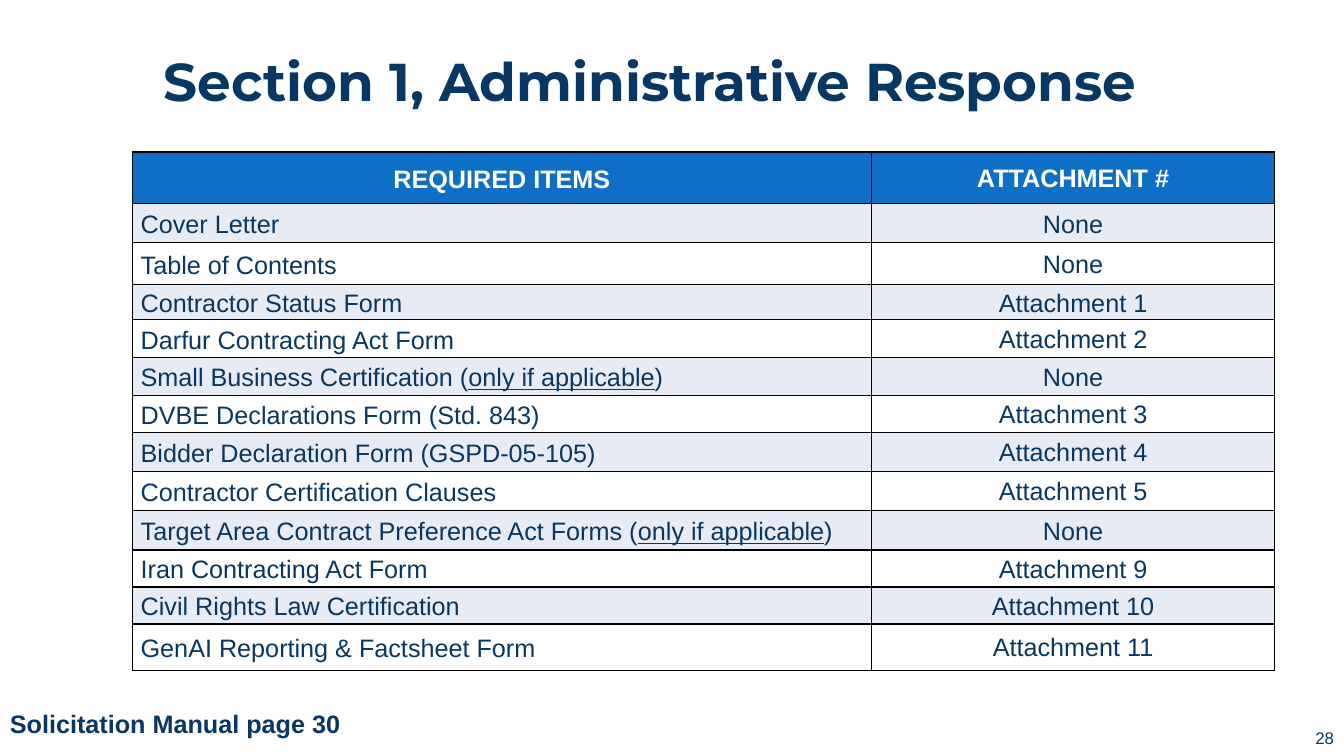
from pptx import Presentation
from pptx.util import Pt
from pptx.dml.color import RGBColor
from pptx.enum.text import PP_ALIGN, MSO_ANCHOR
from pptx.oxml.ns import qn
from lxml.etree import SubElement

COLORS = {"navy": "083763", "blue": "0F6FC6", "pale": "E7EBF5",
          "white": "FFFFFF", "black": "000000"}


def style(para, size, color="navy", bold=False, font="Arial"):
    for run in para.runs:
        run.font.name = font
        run.font.size = Pt(size)
        run.font.bold = bold
        run.font.color.rgb = RGBColor.from_string(COLORS[color])


def label(text, left, top, width, height, wrap=True):
    box = slide.shapes.add_textbox(Pt(left), Pt(top), Pt(width), Pt(height))
    frame = box.text_frame
    frame.text = text
    frame.word_wrap = wrap
    frame.vertical_anchor = MSO_ANCHOR.MIDDLE
    return frame.paragraphs[0]


deck = Presentation()
deck.slide_width, deck.slide_height = Pt(960), Pt(540)
slide = deck.slides.add_slide(deck.slide_layouts[6])

# Title
title = label("Section 1, Administrative Response", 110, 19, 784, 82)
title.line_spacing = 0.9
style(title, 38, bold=True, font="Montserrat")

# Table of required items: item, attachment, row height
NOTE = "only if applicable"
rows = [
    ("REQUIRED ITEMS", "ATTACHMENT #", 37),
    ("Cover Letter", "None", 28),
    ("Table of Contents", "None", 30),
    ("Contractor Status Form", "Attachment 1", 25),
    ("Darfur Contracting Act Form", "Attachment 2", 27),
    (f"Small Business Certification ({NOTE})", "None", 27),
    ("DVBE Declarations Form (Std. 843)", "Attachment 3", 26.5),
    ("Bidder Declaration Form (GSPD-05-105)", "Attachment 4", 28),
    ("Contractor Certification Clauses", "Attachment 5", 28),
    (f"Target Area Contract Preference Act Forms ({NOTE})", "None", 28),
    ("Iran Contracting Act Form", "Attachment 9", 26.5),
    ("Civil Rights Law Certification", "Attachment 10", 26.5),
    ("GenAI Reporting & Factsheet Form", "Attachment 11", 33),
]
total = sum(row[2] for row in rows)
table = slide.shapes.add_table(len(rows), 2, Pt(94.5), Pt(108.5),
                               Pt(816), Pt(total)).table
table.columns[0].width, table.columns[1].width = Pt(528), Pt(288)

for r, (item, form, height) in enumerate(rows):
    table.rows[r].height = Pt(height)
    head = r == 0
    fill = "blue" if head else "pale" if r % 2 else "white"
    for c, text in enumerate((item, form)):
        cell = table.cell(r, c)
        cell.vertical_anchor = MSO_ANCHOR.MIDDLE
        cell.margin_left = cell.margin_right = Pt(5 if c else 6)
        cell.margin_top = Pt(0 if c else 1)
        cell.margin_bottom = Pt(0)

        # Borders go in ahead of the fill
        props = cell._tc.get_or_add_tcPr()
        for side in ("a:lnL", "a:lnR", "a:lnT", "a:lnB"):
            line = SubElement(props, qn(side), w=str(Pt(1)))
            solid = SubElement(line, qn("a:solidFill"))
            SubElement(solid, qn("a:srgbClr"), val=COLORS["black"])
        cell.fill.solid()
        cell.fill.fore_color.rgb = RGBColor.from_string(COLORS[fill])

        # Text, with the note underlined
        para = cell.text_frame.paragraphs[0]
        para.line_spacing = 1.07
        para.alignment = PP_ALIGN.CENTER if head or c else PP_ALIGN.LEFT
        for part in filter(None, text.partition(NOTE)):
            run = para.add_run()
            run.text = part
            run.font.underline = part == NOTE
        style(para, 18, "white" if head else "navy", head)

# Footer
style(label("Solicitation Manual page 30", 0, 502.5, 258, 29, False), 18, bold=True)
page = label("28", 818, 512.5, 142, 29)
page.alignment = PP_ALIGN.RIGHT
style(page, 12)

deck.save("out.pptx")
